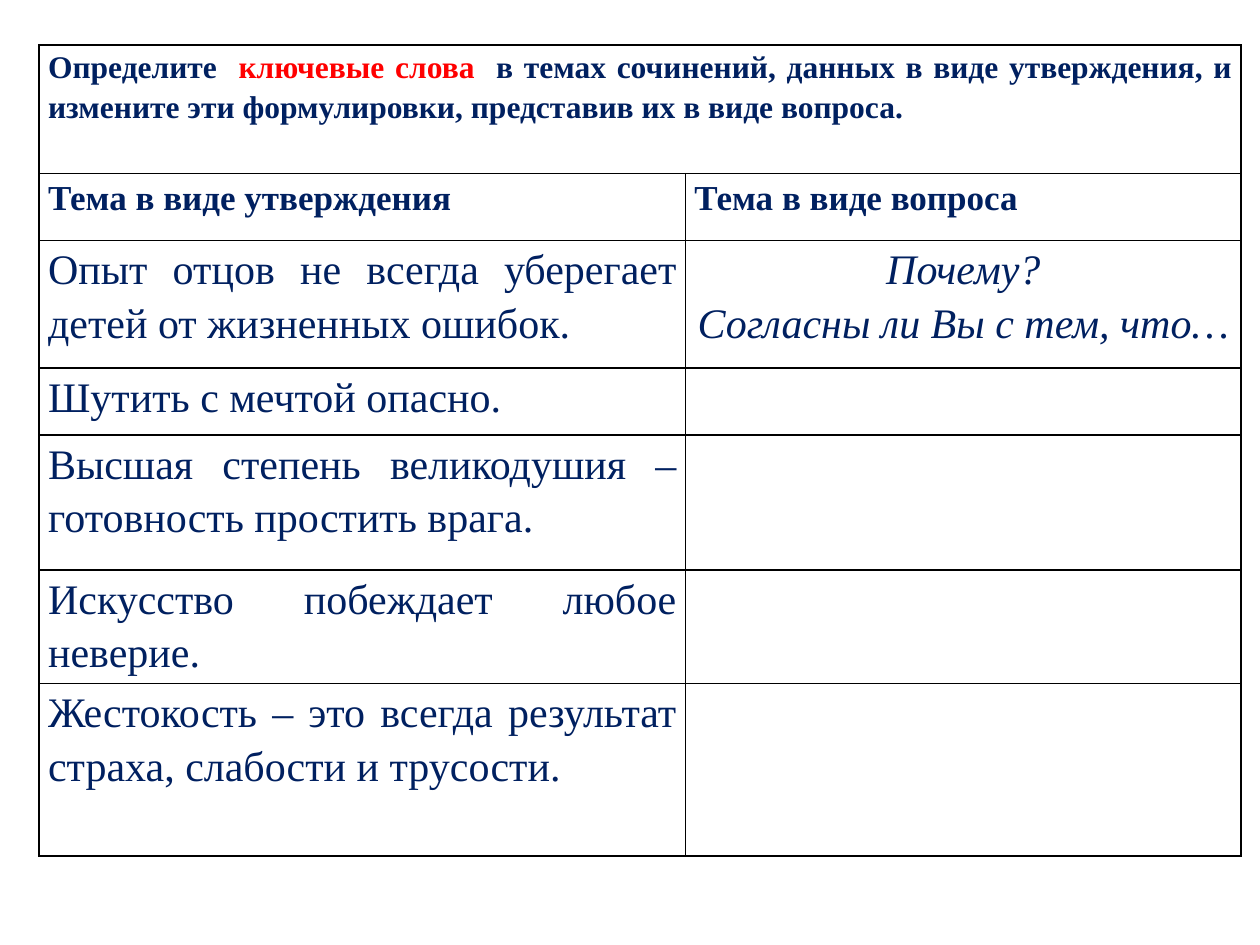
from lxml import etree
from pptx import Presentation
from pptx.dml.color import RGBColor
from pptx.enum.text import PP_ALIGN
from pptx.oxml.ns import qn
from pptx.util import Cm, Pt

JUSTIFY, CENTER = PP_ALIGN.JUSTIFY, PP_ALIGN.CENTER
FONT = "Times New Roman"
NAVY, RED, BLACK = "002060", "FF0000", "000000"

TASK = [
    ("Определите  ", NAVY),
    ("ключевые слова", RED),
    ("  в темах сочинений, данных в виде утверждения, и измените эти "
     "формулировки, представив их в виде вопроса.", NAVY),
]
HEADINGS = ["Тема в виде утверждения", "Тема в виде вопроса"]
STATEMENTS = [
    "Опыт отцов не всегда уберегает детей от жизненных ошибок.",
    "Шутить с мечтой опасно.",
    "Высшая степень великодушия – готовность простить врага.",
    "Искусство побеждает любое неверие.",
    "Жестокость – это всегда результат страха, слабости и трусости.",
]
SAMPLE_QUESTIONS = ["Почему?", "Согласны ли Вы с тем, что…"]

LEFT, TOP = 0.79, 0.91
COL_WIDTHS = [13.03, 11.2]
ROW_HEIGHTS = [2.59, 1.35, 2.57, 1.35, 2.72, 2.29, 3.48]


def rgb(value):
    return RGBColor.from_string(value)


def style_cell(cell):
    """Give a cell black borders, no fill and narrow margins."""
    tcPr = cell._tc.get_or_add_tcPr()
    for side in ("a:lnL", "a:lnR", "a:lnT", "a:lnB"):
        ln = etree.SubElement(tcPr, qn(side), w=str(Pt(1)))
        fill = etree.SubElement(ln, qn("a:solidFill"))
        etree.SubElement(fill, qn("a:srgbClr"), val=BLACK)
    cell.fill.background()
    cell.margin_left = cell.margin_right = Cm(0.18)
    cell.margin_top = cell.margin_bottom = 0


def write(cell, paragraphs, size, align=JUSTIFY, bold=False, italic=False):
    """Fill a cell with paragraphs, each a list of (text, colour) runs."""
    tf = cell.text_frame
    for i, runs in enumerate(paragraphs):
        p = tf.add_paragraph() if i else tf.paragraphs[0]
        p.alignment = align
        p.line_spacing = 1.15
        for text, color in runs:
            r = p.add_run()
            r.text = text
            r.font.name = FONT
            r.font.size = Pt(size)
            r.font.bold = bold
            r.font.italic = italic
            r.font.color.rgb = rgb(color)


def main():
    prs = Presentation()
    prs.slide_width, prs.slide_height = Cm(25.4), Cm(19.05)
    slide = prs.slides.add_slide(prs.slide_layouts[6])

    table = slide.shapes.add_table(
        len(ROW_HEIGHTS), len(COL_WIDTHS), Cm(LEFT), Cm(TOP),
        Cm(sum(COL_WIDTHS)), Cm(sum(ROW_HEIGHTS))).table
    table.first_row = table.horz_banding = False
    for column, width in zip(table.columns, COL_WIDTHS):
        column.width = Cm(width)
    for row, height in zip(table.rows, ROW_HEIGHTS):
        row.height = Cm(height)
    for cell in table.iter_cells():
        style_cell(cell)

    table.cell(0, 0).merge(table.cell(0, 1))
    write(table.cell(0, 0), [TASK], 18, bold=True)
    for col, heading in enumerate(HEADINGS):
        write(table.cell(1, col), [[(heading, NAVY)]], 20, bold=True)
    for row, statement in enumerate(STATEMENTS, start=2):
        write(table.cell(row, 0), [[(statement, NAVY)]], 24)
    write(table.cell(2, 1), [[(q, NAVY)] for q in SAMPLE_QUESTIONS], 24,
          align=CENTER, italic=True)

    prs.save("out.pptx")


if __name__ == "__main__":
    main()
